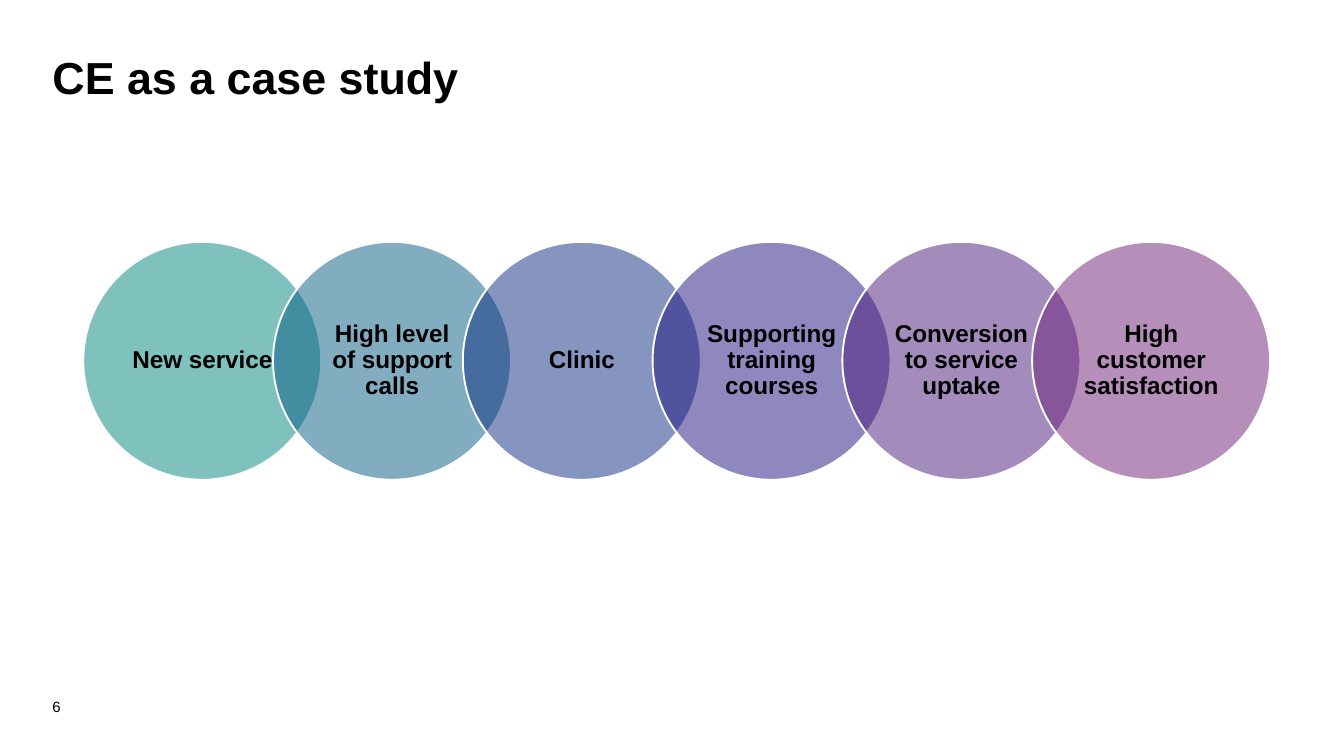
from lxml import etree
from pptx import Presentation
from pptx.dml.color import RGBColor
from pptx.enum.shapes import MSO_SHAPE as Shape
from pptx.enum.text import MSO_ANCHOR as Anchor, PP_ALIGN as Align
from pptx.oxml.ns import qn
from pptx.util import Inches, Pt

COLORS = {
    "text": "000000",
    "outline": "FFFFFF",
    "teal": "00857D",
    "ocean": "065A83",
    "navy": "0C2D80",
    "indigo": "1E127E",
    "violet": "49197A",
    "plum": "6D2077",
}
STAGES = [
    ("New service", "teal"),
    ("High level of support calls", "ocean"),
    ("Clinic", "navy"),
    ("Supporting training courses", "indigo"),
    ("Conversion to service uptake", "violet"),
    ("High customer satisfaction", "plum"),
]


def color(name):
    return RGBColor.from_string(COLORS[name])


def set_text(box, text, size, bold=False, align=Align.LEFT,
             anchor=Anchor.MIDDLE, inset_x=0, inset_y=0):
    frame = box.text_frame
    frame.word_wrap = True
    frame.vertical_anchor = anchor
    frame.margin_left = frame.margin_right = Inches(inset_x)
    frame.margin_top = frame.margin_bottom = Inches(inset_y)
    para = frame.paragraphs[0]
    para.text = text
    para.alignment = align
    para.font.name = "Arial"
    para.font.size = Pt(size)
    para.font.bold = bold
    para.font.color.rgb = color("text")
    return para


def add_title(page, left, top, width, height):
    title = page.shapes.title
    title.left, title.top = Inches(left), Inches(top)
    title.width, title.height = Inches(width), Inches(height)
    set_text(title, "CE as a case study", 24, bold=True, anchor=Anchor.TOP)


def add_page_number(page, left, top, width, height):
    box = page.shapes.add_textbox(
        Inches(left), Inches(top), Inches(width), Inches(height))
    set_text(box, "6", 8)


def add_circle(group, left, top, diameter, fill):
    circle = group.shapes.add_shape(
        Shape.OVAL, Inches(left), Inches(top), Inches(diameter), Inches(diameter))
    circle.shadow.inherit = False
    circle.fill.solid()
    circle.fill.fore_color.rgb = color(fill)
    rgb = circle.fill._xPr.find(qn("a:solidFill")).find(qn("a:srgbClr"))
    etree.SubElement(rgb, qn("a:alpha")).set("val", "50000")
    circle.line.color.rgb = color("outline")
    circle.line.width = Pt(1)


def add_stage_chain(page, left, top, width, diameter):
    group = page.shapes.add_group_shape()
    step = (width - diameter) / (len(STAGES) - 1)
    label_size = 1.25
    offset = (diameter - label_size) / 2
    for index, (text, fill) in enumerate(STAGES):
        x = left + index * step
        add_circle(group, x, top, diameter, fill)
        label = group.shapes.add_textbox(
            Inches(x + offset), Inches(top + offset),
            Inches(label_size), Inches(label_size))
        para = set_text(label, text, 13, bold=True, align=Align.CENTER,
                        inset_x=0.09, inset_y=0.02)
        para.line_spacing = 0.9


def main():
    deck = Presentation()
    deck.slide_width = Inches(10)
    deck.slide_height = deck.slide_width * 9 // 16
    page = deck.slides.add_slide(deck.slide_layouts[5])
    add_title(page, 0.39, 0.37, 7.13, 0.37)
    add_page_number(page, 0.39, 5.06, 0.22, 0.39)
    add_stage_chain(page, 0.62, 1.8, 8.83, 1.77)
    deck.save("out.pptx")


if __name__ == "__main__":
    main()
